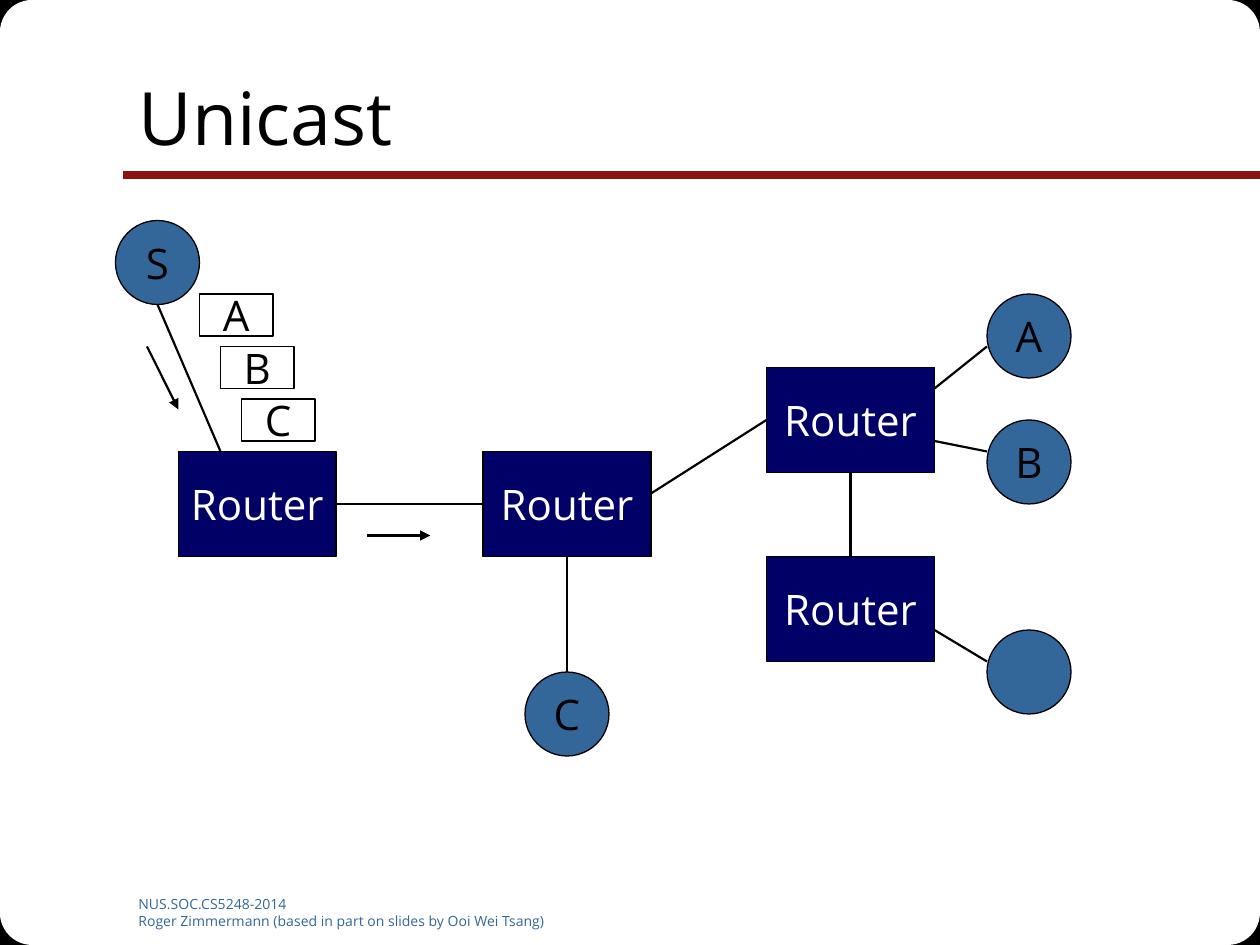
from itertools import product

from lxml.etree import SubElement
from pptx import Presentation
from pptx.dml.color import RGBColor
from pptx.enum.shapes import MSO_CONNECTOR, MSO_SHAPE
from pptx.enum.text import MSO_ANCHOR, PP_ALIGN
from pptx.oxml.ns import qn
from pptx.util import Inches, Pt

BLACK = RGBColor(0x00, 0x00, 0x00)
WHITE = RGBColor(0xFF, 0xFF, 0xFF)
NAVY = RGBColor(0x00, 0x00, 0x66)
BLUE = RGBColor(0x33, 0x66, 0x99)
RED = RGBColor(0x89, 0x14, 0x11)
FONT = "Open Sans"

WIDTH, HEIGHT = Inches(10), Inches(7.5)
UNIT = Inches(1) / 12  # grid of twelve columns and rows to the inch
TOP, LEFT, BOTTOM, RIGHT = range(4)


def grid(*cells):
    return [round(cell * UNIT) for cell in cells]


def set_font(paragraph, size, color):
    paragraph.font.name = FONT
    paragraph.font.size = Pt(size)
    paragraph.font.color.rgb = color


def add_plain_shape(slide, kind, box, fill, line=BLACK):
    shape = slide.shapes.add_shape(kind, *box)
    shape.shadow.inherit = False
    shape.fill.solid()
    shape.fill.fore_color.rgb = fill
    if line is None:
        shape.line.fill.background()
    else:
        shape.line.color.rgb = line
        shape.line.width = Pt(0.75)
    return shape


def add_node(slide, kind, label, cells, fill, color=BLACK):
    """Draw a labelled network node; cells are column, row, width, height."""
    node = add_plain_shape(slide, kind, grid(*cells), fill)
    frame = node.text_frame
    frame.word_wrap = False
    frame.vertical_anchor = MSO_ANCHOR.MIDDLE
    if label:
        paragraph = frame.paragraphs[0]
        paragraph.text = label
        paragraph.alignment = PP_ALIGN.CENTER
        set_font(paragraph, 24, color)
    return node


def add_router(slide, column, row, width=16):
    return add_node(slide, MSO_SHAPE.RECTANGLE, "Router",
                    (column, row, width, 10), NAVY, WHITE)


def add_host(slide, label, column, row):
    return add_node(slide, MSO_SHAPE.OVAL, label, (column, row, 8, 8), BLUE)


def add_line(slide, ends, color=BLACK, width=1.25):
    line = slide.shapes.add_connector(MSO_CONNECTOR.STRAIGHT, *ends)
    line.line.color.rgb = color
    line.line.width = Pt(width)
    SubElement(line.element.spPr, qn("a:effectLst"))
    return line


def add_link(slide, *cells, begin=None, end=None):
    """Link two grid points; begin and end are (node, side) pairs to join."""
    link = add_line(slide, grid(*cells))
    if begin:
        link.begin_connect(*begin)
    if end:
        link.end_connect(*end)


def add_arrow(slide, *cells):
    arrow = add_line(slide, grid(*cells))
    SubElement(arrow.line._get_or_add_ln(), qn("a:tailEnd"), type="triangle")


def add_rounded_frame(slide):
    """Black slide corners, each rounded off by a white tile."""
    for kind, width, height, fill, line in (
            (MSO_SHAPE.RECTANGLE, 0.43, 0.44, BLACK, BLACK),
            (MSO_SHAPE.ROUNDED_RECTANGLE, 1.53, 1.53, WHITE, None)):
        w, h = Inches(width), Inches(height)
        for x, y in product((0, WIDTH - w), (0, HEIGHT - h)):
            add_plain_shape(slide, kind, (x, y, w, h), fill, line)


def add_title(slide, text):
    title = slide.shapes.title
    title.left, title.top = Inches(1), Inches(0.3)
    title.width, title.height = Inches(8.5), Inches(1.25)
    title.text_frame.vertical_anchor = MSO_ANCHOR.MIDDLE
    paragraph = title.text_frame.paragraphs[0]
    paragraph.text = text
    paragraph.alignment = PP_ALIGN.LEFT
    set_font(paragraph, 42, BLACK)
    slide.shapes.element.append(title.element)  # bring in front of the frame


def add_footer(slide, *lines):
    footer = slide.shapes.add_textbox(
        Inches(1), Inches(7.06), Inches(3.75), Inches(0.28))
    frame = footer.text_frame
    frame.word_wrap = True
    frame.text = "\n".join(lines)
    for paragraph in frame.paragraphs:
        set_font(paragraph, 8, BLUE)


def add_network(slide):
    middle = add_router(slide, 46, 43)
    first = add_router(slide, 17, 43, width=15)
    upper = add_router(slide, 73, 35)
    lower = add_router(slide, 73, 53)

    for label, row in (("A", 28), ("B", 40), ("", 60)):
        add_host(slide, label, 94, row)
    receiver_c = add_host(slide, "C", 50, 64)
    add_host(slide, "S", 11, 21)

    add_link(slide, 89, 37, 94, 33)
    add_link(slide, 89, 42, 94, 43)
    add_link(slide, 89, 60, 94, 63)
    add_link(slide, 81, 45, 81, 53, begin=(upper, BOTTOM), end=(lower, TOP))
    add_link(slide, 62, 47, 73, 40, end=(upper, LEFT))
    add_link(slide, 32, 48, 46, 48, begin=(first, RIGHT), end=(middle, LEFT))
    add_link(slide, 54, 53, 54, 64, begin=(middle, BOTTOM),
             end=(receiver_c, TOP))
    add_link(slide, 15, 29, 21, 43)


def add_packets(slide):
    for step, label in enumerate("ABC"):
        add_node(slide, MSO_SHAPE.RECTANGLE, label,
                 (19 + 2 * step, 28 + 5 * step, 7, 4), WHITE)
    add_arrow(slide, 35, 51, 41, 51)
    add_arrow(slide, 14, 33, 17, 39)


def main():
    deck = Presentation()
    deck.slide_width, deck.slide_height = WIDTH, HEIGHT
    slide = deck.slides.add_slide(deck.slide_layouts[5])
    add_rounded_frame(slide)
    rule_y = Inches(1.39)
    add_line(slide, (WIDTH, rule_y, Inches(0.98), rule_y), RED, 4.5)
    add_footer(slide, "NUS.SOC.CS5248-2014",
               "Roger Zimmermann (based in part on slides by Ooi Wei Tsang)")
    add_title(slide, "Unicast")
    add_network(slide)
    add_packets(slide)
    deck.save("out.pptx")


if __name__ == "__main__":
    main()
